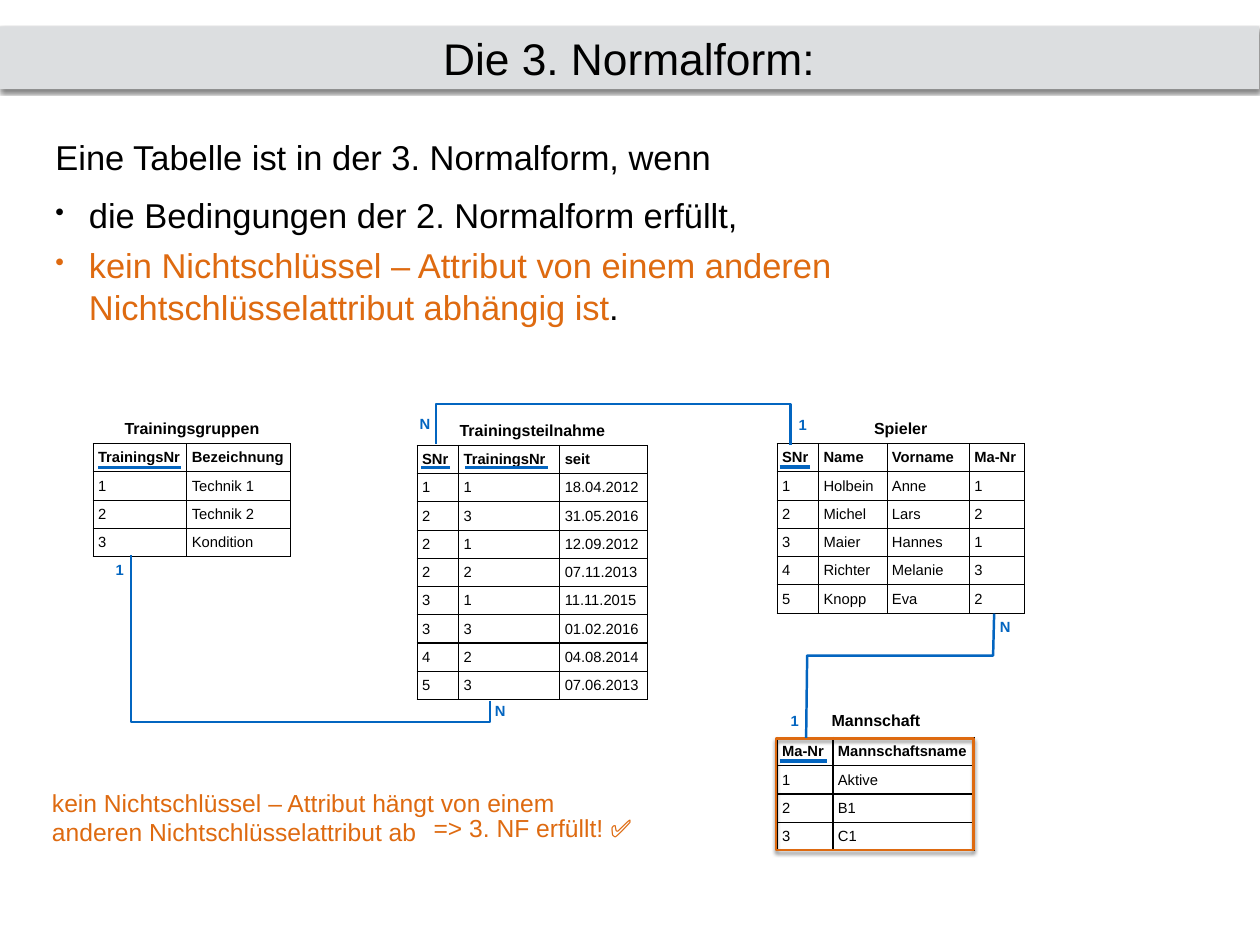
"""Build a slide on the third normal form with four related tables."""
import dataclasses

import lxml.etree
import pptx
import pptx.dml.color
import pptx.enum.shapes
import pptx.enum.text
import pptx.oxml
import pptx.oxml.ns
import pptx.util

Cm, Pt = pptx.util.Cm, pptx.util.Pt
RGB = pptx.dml.color.RGBColor.from_string
qn = pptx.oxml.ns.qn
SubElement = lxml.etree.SubElement
PP_ALIGN = pptx.enum.text.PP_ALIGN
MIDDLE, TOP = pptx.enum.text.MSO_ANCHOR.MIDDLE, pptx.enum.text.MSO_ANCHOR.TOP
RECTANGLE = pptx.enum.shapes.MSO_SHAPE.RECTANGLE
STRAIGHT = pptx.enum.shapes.MSO_CONNECTOR.STRAIGHT


@dataclasses.dataclass
class Theme:
    font: str = "Arial"
    black: str = "000000"
    white: str = "FFFFFF"
    grey: str = "DCDEE0"
    blue: str = "0365C0"
    orange: str = "DE6A10"
    title: int = 36
    body: int = 28
    note: int = 20
    caption: int = 13
    cell: int = 12


theme = Theme()
MARGINS = {f"margin_{side}": Cm(0.14) for side in ("left", "top", "right", "bottom")}


def add_run(p, text, size, color=theme.black, bold=False):
    r = p.add_run()
    r.text = text
    for name, value in {"name": theme.font, "size": Pt(size), "bold": bold}.items():
        setattr(r.font, name, value)
    r.font.color.rgb = RGB(color)


def add_text_box(x, y, w, h, wrap=True, anchor=TOP):
    tf = s.shapes.add_textbox(Cm(x), Cm(y), Cm(w), Cm(h)).text_frame
    grow = pptx.enum.text.MSO_AUTO_SIZE.SHAPE_TO_FIT_TEXT
    fmt = {**MARGINS, "word_wrap": wrap, "vertical_anchor": anchor, "auto_size": grow}
    for name, value in fmt.items():
        setattr(tf, name, value)
    return tf


prs = pptx.Presentation()
prs.slide_width, prs.slide_height = Cm(36.12), Cm(27.1)
s = prs.slides.add_slide(prs.slide_layouts[6])

row_height = 0.81
tables = [
    ("Trainingsteilnahme", 11.96, 11.96, 0.81, MIDDLE, [1.19, 2.9, 2.51], [
        ["SNr", "TrainingsNr", "seit"],
        ["1", "1", "18.04.2012"],
        ["2", "3", "31.05.2016"],
        ["2", "1", "12.09.2012"],
        ["2", "2", "07.11.2013"],
        ["3", "1", "11.11.2015"],
        ["3", "3", "01.02.2016"],
        ["4", "2", "04.08.2014"],
        ["5", "3", "07.06.2013"]]),
    ("Spieler", 22.28, 11.91, 0.81, TOP, [1.19, 1.96, 2.36, 1.57], [
        ["SNr", "Name", "Vorname", "Ma-Nr"],
        ["1", "Holbein", "Anne", "1"],
        ["2", "Michel", "Lars", "2"],
        ["3", "Maier", "Hannes", "1"],
        ["4", "Richter", "Melanie", "3"],
        ["5", "Knopp", "Eva", "2"]]),
    ("Trainingsgruppen", 2.67, 11.86, 0.86, MIDDLE, [2.69, 2.97], [
        ["TrainingsNr", "Bezeichnung"],
        ["1", "Technik 1"],
        ["2", "Technik 2"],
        ["3", "Kondition"]]),
    ("Mannschaft", 22.28, 20.29, 0.86, TOP, [1.6, 4.06], [
        ["Ma-Nr", "Mannschaftsname"],
        ["1", "Aktive"],
        ["2", "B1"],
        ["3", "C1"]]),
]
for caption, x, y, caption_height, caption_anchor, widths, records in tables:
    heights = [caption_height] + [row_height] * len(records)
    table = s.shapes.add_table(len(heights), len(widths), Cm(x), Cm(y),
                               Cm(sum(widths)), Cm(sum(heights))).table
    table.first_row = table.horz_banding = False
    for column, width in zip(table.columns, widths):
        column.width = Cm(width)
    for row, height in zip(table.rows, heights):
        row.height = Cm(height)
    table.cell(0, 0).merge(table.cell(0, len(widths) - 1))
    rows = [[caption] + [""] * (len(widths) - 1)] + records
    for i, texts in enumerate(rows):
        for j, text in enumerate(texts):
            cell = table.cell(i, j)
            anchor = caption_anchor if i == 0 else MIDDLE
            for name, value in {**MARGINS, "vertical_anchor": anchor}.items():
                setattr(cell, name, value)
            for edge in ("lnL", "lnR", "lnT", "lnB"):
                ln = SubElement(cell._tc.get_or_add_tcPr(), qn(f"a:{edge}"), w=str(Pt(1)))
                if i == 0 and edge != "lnB":
                    SubElement(ln, qn("a:noFill"))
                else:
                    SubElement(SubElement(ln, qn("a:solidFill")), qn("a:srgbClr"), val=theme.black)
            cell.fill.solid()
            cell.fill.fore_color.rgb = RGB(theme.white)
            if text:
                p = cell.text_frame.paragraphs[0]
                p.alignment = PP_ALIGN.CENTER if i == 0 else PP_ALIGN.LEFT
                add_run(p, text, theme.caption if i == 0 else theme.cell, bold=i < 2)

key_underlines = [(12.07, 12.9, 13.41), (13.34, 15.7, 13.41), (22.35, 23.22, 13.39),
                  (2.82, 5.18, 13.41), (22.35, 23.7, 21.82)]
for x1, x2, y in key_underlines:
    underline = s.shapes.add_connector(STRAIGHT, Cm(x1), Cm(y), Cm(x2), Cm(y))
    underline.line.color.rgb = RGB(theme.blue)
    underline.line.width = Pt(3)
    SubElement(underline._element.spPr, qn("a:effectLst"))

title_bar = s.shapes.add_shape(RECTANGLE, Cm(-0.03), Cm(0.76), Cm(36.12), Cm(1.8))
title_bar.fill.solid()
title_bar.fill.fore_color.rgb = RGB(theme.grey)
title_bar.line.fill.background()
frame = s.shapes.add_shape(RECTANGLE, Cm(22.25), Cm(21.18), Cm(5.66), Cm(3.2))
frame.fill.background()
frame.line.color.rgb = RGB(theme.orange)
frame.line.width = Pt(2)
for shape in (title_bar, frame):
    shape.shadow.inherit = False
    effects = shape._element.spPr.find(qn("a:effectLst"))
    shadow = SubElement(effects, qn("a:outerShdw"), blurRad=str(Pt(3)), dist=str(Pt(2)),
                        dir="5400000", rotWithShape="0")
    color = SubElement(shadow, qn("a:srgbClr"), val=theme.black)
    SubElement(color, qn("a:alpha"), val="50000")

tf = title_bar.text_frame
for name, value in {**MARGINS, "vertical_anchor": MIDDLE, "word_wrap": True}.items():
    setattr(tf, name, value)
tf.paragraphs[0].alignment = PP_ALIGN.CENTER
add_run(tf.paragraphs[0], "Die 3. Normalform:", theme.title)

relations = [
    [(22.66, 12.75), (22.66, 11.58), (12.5, 11.58), (12.5, 12.73)],
    [(14.05, 20.09), (14.05, 20.7), (3.76, 20.7), (3.76, 15.93)],
    [(28.5, 17.6), (28.47, 18.8), (23.14, 18.8), (23.11, 21.16)],
]
for relation in relations:
    start, *rest = [(Cm(x), Cm(y)) for x, y in relation]
    builder = s.shapes.build_freeform(*start)
    builder.add_line_segments(rest, close=False)
    path_line = builder.convert_to_shape()
    path_line.fill.background()
    path_line.line.color.rgb = RGB(theme.blue)
    path_line.line.width = Pt(2)
    path_line.shadow.inherit = False

cardinalities = [("N", 11.86, 11.76), ("1", 22.73, 11.79), ("N", 14.02, 19.99),
                 ("1", 3.15, 15.93), ("N", 28.5, 17.58), ("1", 22.5, 20.27)]
for label, x, y in cardinalities:
    tf = add_text_box(x, y, 0.64 if label == "N" else 0.56, 0.79, False, MIDDLE)
    tf.paragraphs[0].alignment = PP_ALIGN.CENTER
    add_run(tf.paragraphs[0], label, theme.cell, theme.blue, True)

tf = add_text_box(1.45, 3.76, 23.19, 5.82)
add_run(tf.paragraphs[0], "Eine Tabelle ist in der 3. Normalform, wenn", theme.body)
conditions = [
    (14, [("die Bedingungen der 2. Normalform erfüllt,", theme.black)]),
    (7, [("kein Nichtschlüssel – Attribut von einem anderen "
          "Nichtschlüsselattribut abhängig ist", theme.orange), (".", theme.black)]),
]
for space, runs in conditions:
    p = tf.add_paragraph()
    p.space_before = Pt(space)
    pPr = p._p.get_or_add_pPr()
    for name, value in {"marL": Cm(0.96), "indent": -Cm(0.96)}.items():
        pPr.set(name, str(value))
    SubElement(pPr, qn("a:buSzPct"), val="75000")
    SubElement(pPr, qn("a:buChar"), char="•")
    for text, color in runs:
        add_run(p, text, theme.body, color)

notes = [
    ("kein Nichtschlüssel – Attribut hängt von einem anderen Nichtschlüsselattribut ab",
     1.35, 22.45, 15.06, 1.98, True),
    ("=> 3. NF erfüllt! ✅", 12.29, 23.16, 6.5, 1.3, False),
]
for text, x, y, w, h, wrap in notes:
    tf = add_text_box(x, y, w, h, wrap)
    add_run(tf.paragraphs[0], text, theme.note, theme.orange)

prs.save("out.pptx")
